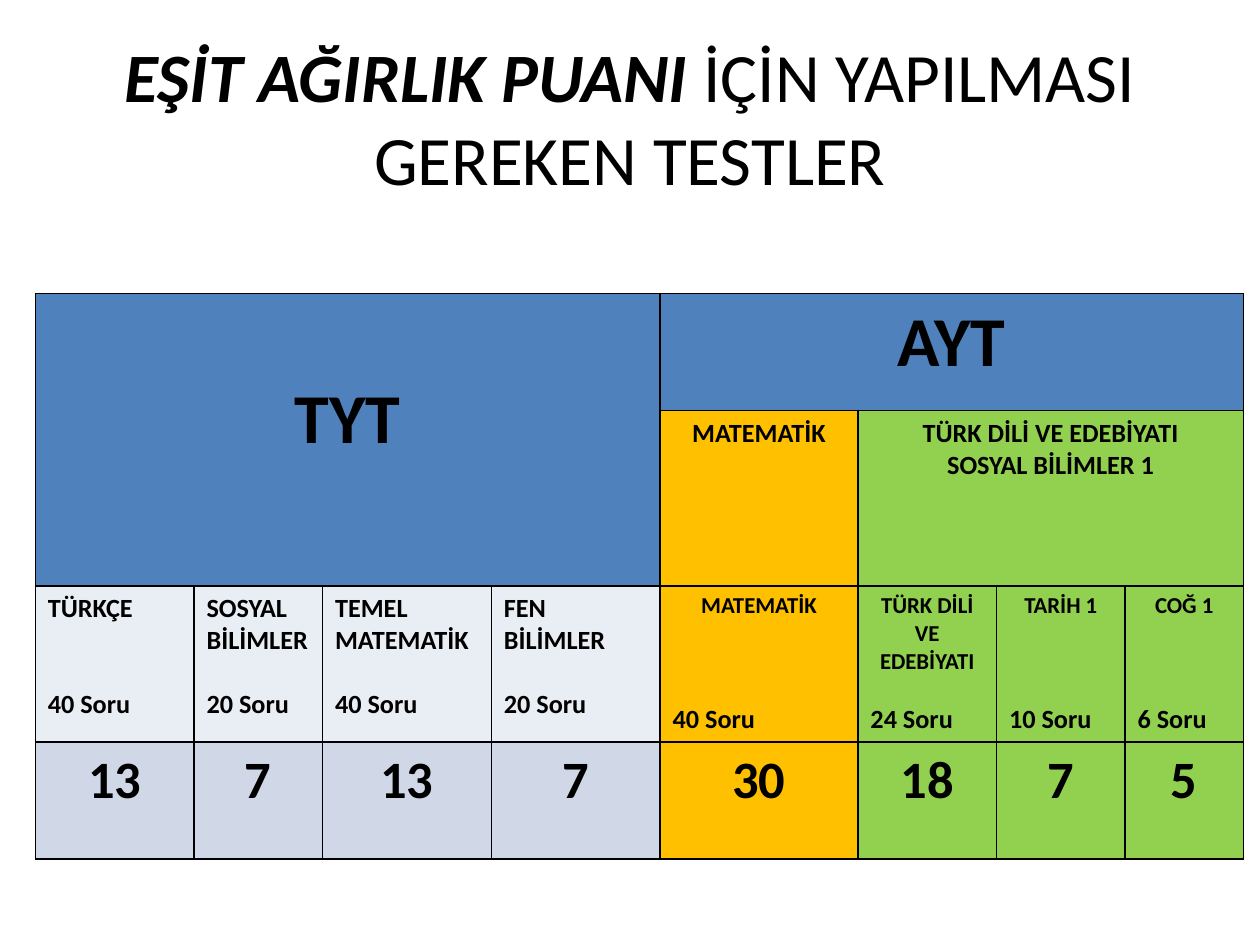
import lxml.etree
import pptx
import pptx.dml.color
import pptx.enum.text
import pptx.oxml.ns
import pptx.util

Inches = pptx.util.Inches
Points = pptx.util.Pt
ALIGN = pptx.enum.text.PP_ALIGN

BLUE, PALE, MIST = "4F81BD", "E9EDF4", "D0D8E8"
ORANGE, GREEN, BLACK = "FFC000", "92D050", "000000"
LINE_HEIGHT = 1.22
COLUMN_WIDTHS = [1.26, 1.02, 1.34, 1.34, 1.57, 1.1, 1.02, 0.94]
ROW_HEIGHTS = [0.93, 1.39, 1.24, 0.93]
AYT_COLUMN = 4

HEADINGS = [
    (0, 0, 1, 3, BLUE, 40, ["TYT"]),
    (0, 4, 0, 7, BLUE, 40, ["AYT"]),
    (1, 4, 1, 4, ORANGE, 15, ["MATEMATİK"]),
    (1, 5, 1, 7, GREEN, 15, ["TÜRK DİLİ VE EDEBİYATI", "SOSYAL BİLİMLER 1"]),
]
TESTS = [
    ("TÜRKÇE", "40 Soru", 2, "13"),
    ("SOSYAL BİLİMLER", "20 Soru", 1, "7"),
    ("TEMEL MATEMATİK", "40 Soru", 1, "13"),
    ("FEN BİLİMLER", "20 Soru", 1, "7"),
    ("MATEMATİK", "40 Soru", 3, "30"),
    ("TÜRK DİLİ VE EDEBİYATI", "24 Soru", 1, "18"),
    ("TARİH 1", "10 Soru", 3, "7"),
    ("COĞ 1", "6 Soru", 3, "5"),
]


def color(value):
    return pptx.dml.color.RGBColor.from_string(value)


def format_span(span, size, bold=True, italic=False):
    span.font.name = "Calibri"
    span.font.size = Points(size)
    span.font.bold = bold
    span.font.italic = italic
    span.font.color.rgb = color(BLACK)


def add_borders(cell):
    properties = cell._tc.get_or_add_tcPr()
    for side in ("a:lnL", "a:lnR", "a:lnT", "a:lnB"):
        line = lxml.etree.SubElement(
            properties, pptx.oxml.ns.qn(side), w=str(Points(1)))
        fill = lxml.etree.SubElement(line, pptx.oxml.ns.qn("a:solidFill"))
        lxml.etree.SubElement(fill, pptx.oxml.ns.qn("a:srgbClr"), val=BLACK)


def fill_cell(cell, fill, lines, sizes, alignments):
    cell.fill.solid()
    cell.fill.fore_color.rgb = color(fill)
    cell.text_frame.text = "\n".join(lines)
    for para, size, alignment in zip(cell.text_frame.paragraphs, sizes, alignments):
        para.alignment = alignment
        format_span(para.runs[0], size)


def add_title(page, left, top, width, height):
    title = page.shapes.title
    title.left, title.top = Inches(left), Inches(top)
    title.width, title.height = Inches(width), Inches(height)
    frame = title.text_frame
    frame.word_wrap = True
    frame.vertical_anchor = pptx.enum.text.MSO_ANCHOR.MIDDLE
    para = frame.paragraphs[0]
    para.alignment = ALIGN.CENTER
    for text, strong in (("EŞİT AĞIRLIK PUANI ", True),
                         ("İÇİN YAPILMASI GEREKEN TESTLER", False)):
        span = para.add_run()
        span.text = text
        format_span(span, 39.6, strong, strong)


def add_headings(table):
    for top, left, bottom, right, fill, size, lines in HEADINGS:
        cell = table.cell(top, left)
        if (top, left) != (bottom, right):
            cell.merge(table.cell(bottom, right))
        fill_cell(cell, fill, lines, [size] * len(lines), [ALIGN.CENTER] * len(lines))
    table.cell(0, 0).margin_top = Inches(0.66)


def add_tests(table):
    for column, (name, count, gap_lines, target) in enumerate(TESTS):
        if column < AYT_COLUMN:
            name_fill, target_fill = PALE, MIST
            name_size, name_alignment = 15, ALIGN.LEFT
        else:
            name_fill = target_fill = ORANGE if column == AYT_COLUMN else GREEN
            name_size, name_alignment = 13, ALIGN.CENTER
        cell = table.cell(2, column)
        fill_cell(cell, name_fill, [name, count], [name_size, 15],
                  [name_alignment, ALIGN.LEFT])
        gap = round(gap_lines * name_size * LINE_HEIGHT, 1)
        cell.text_frame.paragraphs[1].space_before = Points(gap)
        fill_cell(table.cell(3, column), target_fill, [target], [30], [ALIGN.CENTER])


def add_score_table(page, left, top):
    table = page.shapes.add_table(
        len(ROW_HEIGHTS), len(COLUMN_WIDTHS), Inches(left), Inches(top),
        Inches(sum(COLUMN_WIDTHS)), Inches(sum(ROW_HEIGHTS))).table
    for column, width in zip(table.columns, COLUMN_WIDTHS):
        column.width = Inches(width)
    for row, height in zip(table.rows, ROW_HEIGHTS):
        row.height = Inches(height)
    for cell in table.iter_cells():
        add_borders(cell)
    add_headings(table)
    add_tests(table)


def main():
    deck = pptx.Presentation()
    deck.slide_width, deck.slide_height = Inches(10), Inches(7.5)
    page = deck.slides.add_slide(deck.slide_layouts[5])
    add_title(page, 0.5, 0.3, 9, 1.25)
    add_score_table(page, 0.28, 2.33)
    deck.save("out.pptx")


if __name__ == "__main__":
    main()
